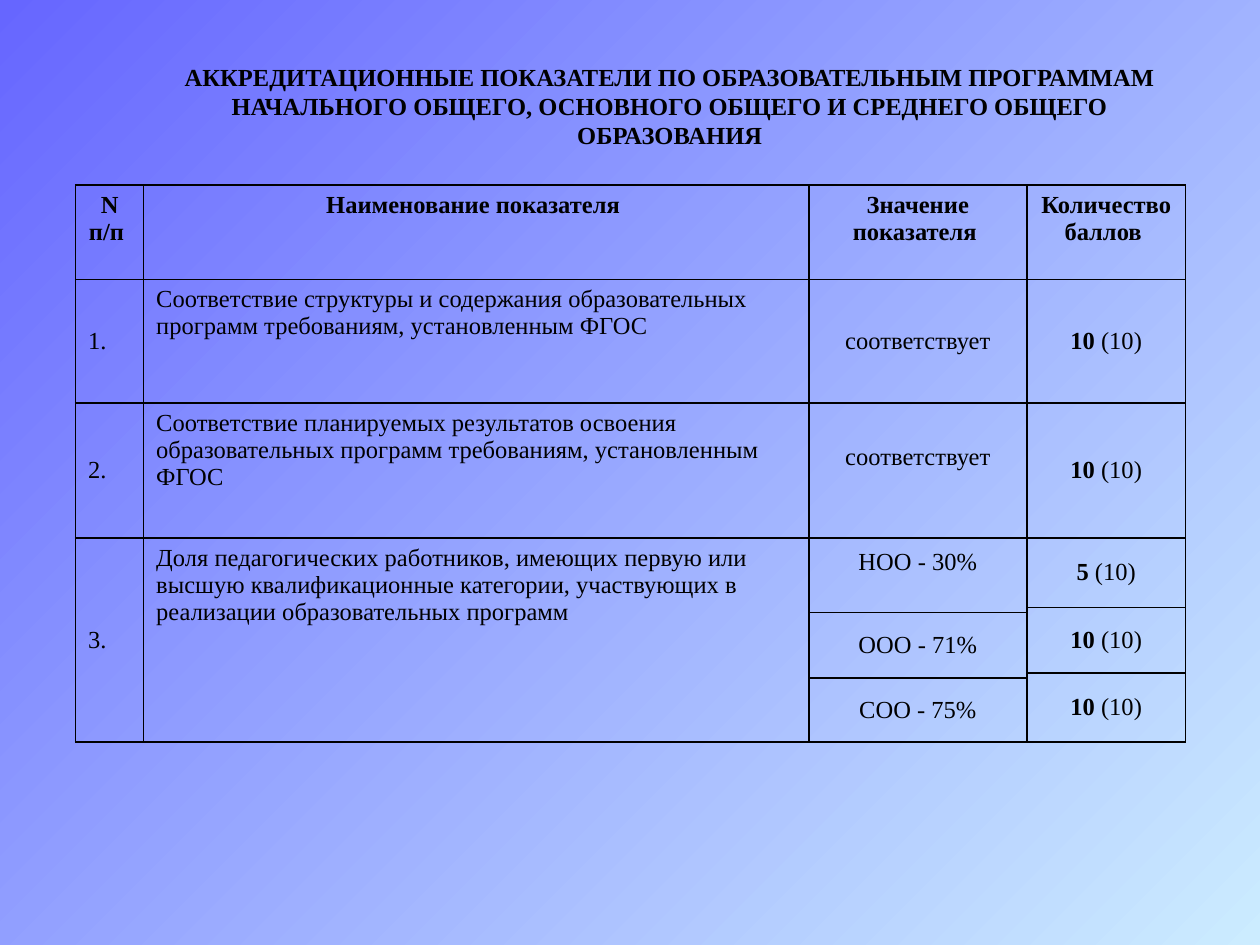
from dataclasses import dataclass

from lxml.etree import SubElement
from pptx import Presentation
from pptx.dml.color import RGBColor
from pptx.enum.text import MSO_ANCHOR, PP_ALIGN
from pptx.oxml.ns import qn
from pptx.util import Inches, Pt


@dataclass(frozen=True)
class Theme:
    font: str = "Times New Roman"
    size: int = 14
    ink: str = "000000"
    gradient: tuple = ("6666FF", "CCECFF")
    border: float = 1


THEME = Theme()
TITLE = (
    "АККРЕДИТАЦИОННЫЕ ПОКАЗАТЕЛИ ПО ОБРАЗОВАТЕЛЬНЫМ ПРОГРАММАМ "
    "НАЧАЛЬНОГО ОБЩЕГО, ОСНОВНОГО ОБЩЕГО И СРЕДНЕГО ОБЩЕГО ОБРАЗОВАНИЯ"
)
COLUMN_WIDTHS = (0.54, 5.28, 1.73, 1.26)
ROW_HEIGHTS = (0.75, 0.98, 1.07, 0.55, 0.04, 0.48, 0.04, 0.51)
HEADERS = ("N п/п ", "Наименование показателя ", "Значение показателя ", "Количество баллов ")
# Each entry: first row, row span, text
INDICATORS = (
    (1, 1, "Соответствие структуры и содержания образовательных программ "
           "требованиям, установленным ФГОС"),
    (2, 1, "Соответствие планируемых результатов освоения образовательных "
           "программ требованиям, установленным ФГОС"),
    (3, 5, "Доля педагогических работников, имеющих первую или высшую "
           "квалификационные категории, участвующих в реализации "
           "образовательных программ"),
)
# Each entry: first row, row span, text, bottom margin
VALUES = (
    (1, 1, "соответствует", 0),
    (2, 1, "соответствует", 0.22),
    (3, 2, "НОО - 30%", 0.2),
    (5, 2, "ООО - 71%", 0),
    (7, 1, "СОО - 75%", 0),
)
# Each entry: first row, row span, points scored
SCORES = ((1, 1, "10"), (2, 1, "10"), (3, 1, "5"), (4, 2, "10"), (6, 2, "10"))


def add_run(paragraph, text, bold=False):
    run = paragraph.add_run()
    run.text = text
    run.font.name = THEME.font
    run.font.size = Pt(THEME.size)
    run.font.bold = bold
    run.font.color.rgb = RGBColor.from_string(THEME.ink)


def paint_background(slide):
    fill = slide.background.fill
    fill.gradient()
    fill.gradient_angle = 315
    for stop, color in zip(fill.gradient_stops, THEME.gradient):
        stop.color.rgb = RGBColor.from_string(color)


def add_title(slide, left, top, width, height):
    box = slide.shapes.add_textbox(Inches(left), Inches(top), Inches(width), Inches(height))
    box.text_frame.word_wrap = True
    paragraph = box.text_frame.paragraphs[0]
    paragraph.alignment = PP_ALIGN.CENTER
    add_run(paragraph, TITLE, bold=True)


def style_cell(cell):
    """Give the cell black borders on all sides and no fill."""
    properties = cell._tc.get_or_add_tcPr()
    for side in ("a:lnL", "a:lnR", "a:lnT", "a:lnB"):
        line = SubElement(properties, qn(side), w=str(Pt(THEME.border)))
        fill = SubElement(line, qn("a:solidFill"))
        SubElement(fill, qn("a:srgbClr"), val=THEME.ink)
    cell.fill.background()


def fill_cell(table, row, column, runs, span=1, centered=True, middle=True,
              side=0.07, top=0, bottom=0):
    """Write (text, bold) runs into a cell that covers span rows."""
    cell = table.cell(row, column)
    if span > 1:
        cell.merge(table.cell(row + span - 1, column))
    cell.margin_left = cell.margin_right = Inches(side)
    cell.margin_top, cell.margin_bottom = Inches(top), Inches(bottom)
    cell.vertical_anchor = MSO_ANCHOR.MIDDLE if middle else MSO_ANCHOR.TOP
    paragraph = cell.text_frame.paragraphs[0]
    paragraph.alignment = PP_ALIGN.CENTER if centered else PP_ALIGN.LEFT
    for text, bold in runs:
        add_run(paragraph, text, bold)


def add_indicator_table(slide, left, top):
    table = slide.shapes.add_table(
        len(ROW_HEIGHTS), len(COLUMN_WIDTHS), Inches(left), Inches(top),
        Inches(sum(COLUMN_WIDTHS)), Inches(sum(ROW_HEIGHTS))).table
    table.first_row = table.horz_banding = False
    for column, width in zip(table.columns, COLUMN_WIDTHS):
        column.width = Inches(width)
    for row, height in zip(table.rows, ROW_HEIGHTS):
        row.height = Inches(height)
    for cell in table.iter_cells():
        style_cell(cell)

    padding = {"side": 0.1, "top": 0.05, "bottom": 0.05}
    for column, header in enumerate(HEADERS):
        fill_cell(table, 0, column, [(header, True)], middle=False, **padding)
    for number, (row, span, name) in enumerate(INDICATORS, start=1):
        fill_cell(table, row, 0, [(f"{number}.", False)], span, centered=False, **padding)
        fill_cell(table, row, 1, [(name, False)], span, centered=False, middle=False, **padding)
    for row, span, value, bottom in VALUES:
        fill_cell(table, row, 2, [(value, False)], span, bottom=bottom)
    for row, span, score in SCORES:
        fill_cell(table, row, 3, [(score, True), (" (10)", False)], span)


def main():
    presentation = Presentation()
    presentation.slide_width, presentation.slide_height = Inches(10), Inches(7.5)
    slide = presentation.slides.add_slide(presentation.slide_layouts[6])
    paint_background(slide)
    add_indicator_table(slide, 0.6, 1.47)
    add_title(slide, 1.14, 0.44, 8.35, 0.81)
    presentation.save("out.pptx")


if __name__ == "__main__":
    main()
